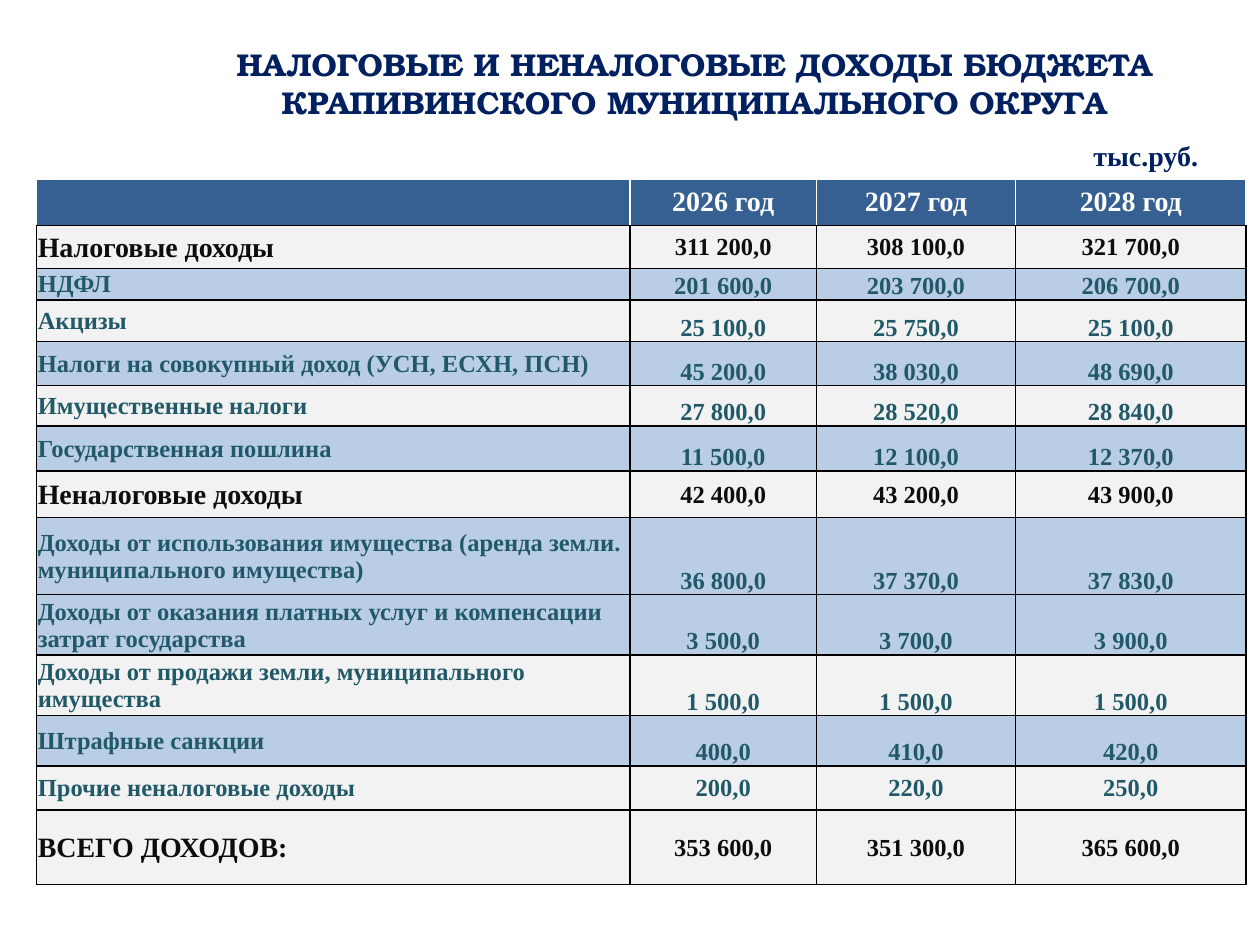
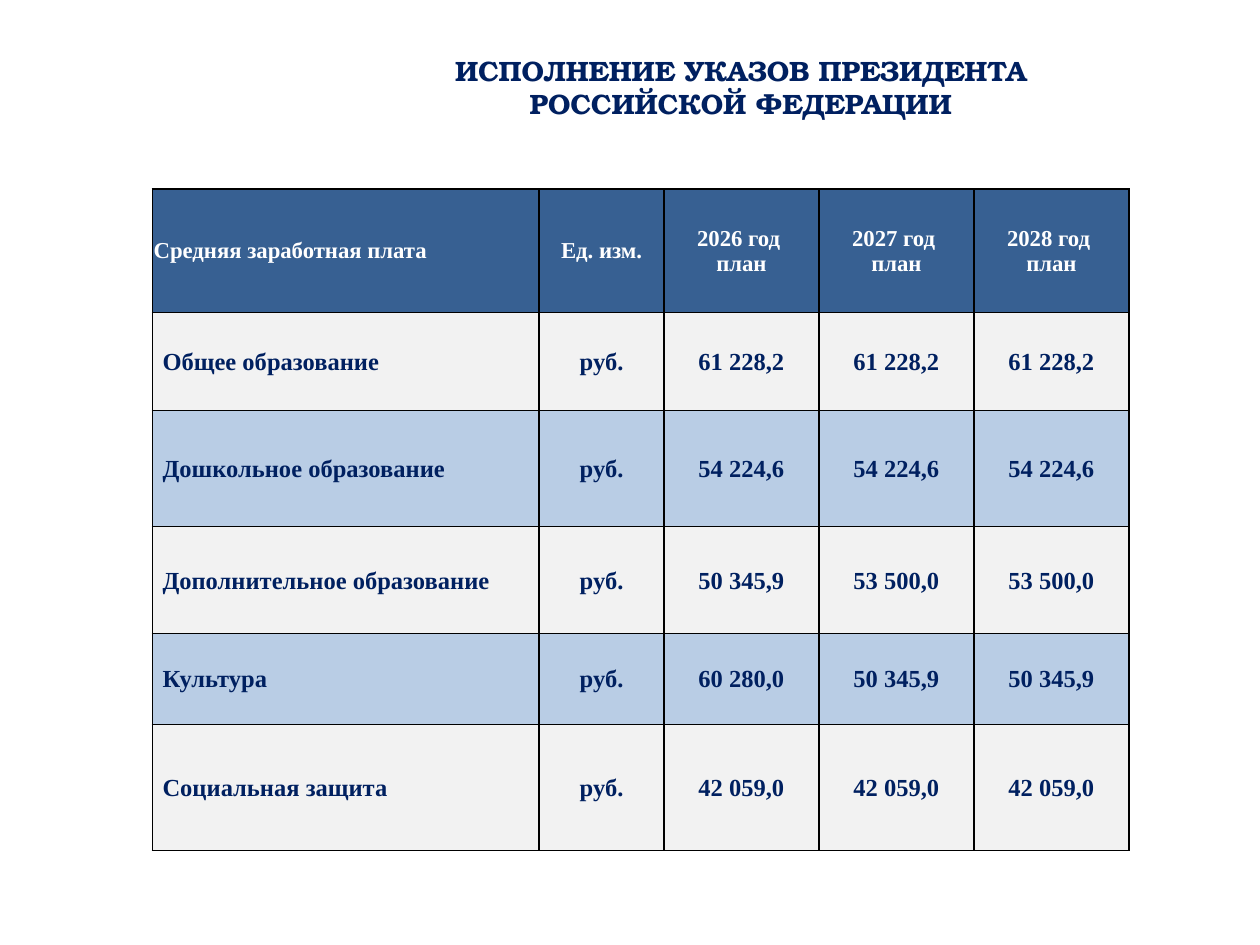
from dataclasses import dataclass, replace
from itertools import product

from pptx import Presentation
from pptx.dml.color import RGBColor
from pptx.enum.shapes import MSO_SHAPE
from pptx.enum.text import MSO_ANCHOR, PP_ALIGN
from pptx.oxml import parse_xml
from pptx.oxml.ns import nsdecls
from pptx.slide import Slide
from pptx.table import _Cell
from pptx.text.text import TextFrame
from pptx.util import Inches, Pt


@dataclass(frozen=True)
class Theme:
    title_font: str = "TeX Gyre Bonum"
    body_font: str = "Times New Roman"
    white: RGBColor = RGBColor(0xFF, 0xFF, 0xFF)
    black: RGBColor = RGBColor(0, 0, 0)
    navy: RGBColor = RGBColor(0x00, 0x20, 0x60)
    header: RGBColor = RGBColor(0x37, 0x60, 0x92)
    light: RGBColor = RGBColor(0xF2, 0xF2, 0xF2)
    tint: RGBColor = RGBColor(0xB9, 0xCD, 0xE5)
    teal: RGBColor = RGBColor(0x21, 0x59, 0x68)
    ink: RGBColor = RGBColor(0x0D, 0x0D, 0x0D)
    large_title: int = 18
    small_title: int = 16
    heading: int = 16
    body: int = 14
    compact: int = 13


THEME = Theme()
TIGHT = (0.01, 0.01, 0.01, 0)
INDENTED = (0.08, 0.01, 0.01, 0)
ROOMY = (0.1, 0.05, 0.1, 0.05)


@dataclass(frozen=True)
class Box:
    left: float
    top: float
    width: float
    height: float

    def lengths(self) -> tuple:
        return tuple(map(Inches, (self.left, self.top, self.width, self.height)))


@dataclass(frozen=True)
class RowStyle:
    fill: RGBColor
    color: RGBColor
    label_size: int = THEME.body
    value_size: int = THEME.body
    value_anchor: MSO_ANCHOR = MSO_ANCHOR.MIDDLE
    label_margins: tuple = TIGHT
    value_margins: tuple = TIGHT
    edge: RGBColor = THEME.black


@dataclass(frozen=True)
class Row:
    height: float
    style: RowStyle
    cells: tuple


INCOME_HEADER = RowStyle(THEME.header, THEME.white, value_size=THEME.heading,
                         value_margins=ROOMY, edge=THEME.white)
INCOME_GROUP = RowStyle(THEME.light, THEME.ink, label_size=THEME.heading)
INCOME_PLAIN = RowStyle(THEME.light, THEME.teal, value_anchor=MSO_ANCHOR.BOTTOM)
INCOME_TINT = replace(INCOME_PLAIN, fill=THEME.tint)
INCOME_OTHER = replace(INCOME_PLAIN, value_anchor=MSO_ANCHOR.MIDDLE)
SALARY_HEADER = RowStyle(THEME.header, THEME.white, THEME.compact, THEME.compact)
SALARY_PLAIN = RowStyle(THEME.light, THEME.navy, label_margins=INDENTED)
SALARY_TINT = replace(SALARY_PLAIN, fill=THEME.tint)

YEARS = ("2026 год", "2027 год", "2028 год")

INCOME_ROWS = (
    Row(0.37, INCOME_HEADER, ("", *YEARS)),
    Row(0.34, INCOME_GROUP, ("Налоговые доходы", "311 200,0", "308 100,0", "321 700,0")),
    Row(0.25, INCOME_TINT, ("НДФЛ", "201 600,0", "203 700,0", "206 700,0")),
    Row(0.33, INCOME_PLAIN, ("Акцизы", "25 100,0", "25 750,0", "25 100,0")),
    Row(0.35, INCOME_TINT, ("Налоги на совокупный доход (УСН, ЕСХН, ПСН)",
                            "45 200,0", "38 030,0", "48 690,0")),
    Row(0.32, INCOME_PLAIN, ("Имущественные налоги", "27 800,0", "28 520,0", "28 840,0")),
    Row(0.36, INCOME_TINT, ("Государственная пошлина", "11 500,0", "12 100,0", "12 370,0")),
    Row(0.37, INCOME_GROUP, ("Неналоговые доходы", "42 400,0", "43 200,0", "43 900,0")),
    Row(0.61, INCOME_TINT, ("Доходы от использования имущества (аренда земли. "
                            "муниципального имущества)",
                            "36 800,0", "37 370,0", "37 830,0")),
    Row(0.48, INCOME_TINT, ("Доходы от оказания платных услуг и компенсации "
                            "затрат государства", "3 500,0", "3 700,0", "3 900,0")),
    Row(0.48, INCOME_PLAIN, ("Доходы от продажи земли, муниципального имущества",
                             "1 500,0", "1 500,0", "1 500,0")),
    Row(0.4, INCOME_TINT, ("Штрафные санкции", "400,0", "410,0", "420,0")),
    Row(0.35, INCOME_OTHER, ("Прочие неналоговые доходы", "200,0", "220,0", "250,0")),
    Row(0.59, INCOME_GROUP, ("ВСЕГО ДОХОДОВ:", "353 600,0", "351 300,0", "365 600,0")),
)

SALARY_ROWS = (
    Row(0.98, SALARY_HEADER, ("Средняя заработная плата", "Ед. изм.",
                              *(f"{year} \nплан" for year in YEARS))),
    Row(0.78, SALARY_PLAIN, ("Общее образование", "руб.",
                             "61 228,2", "61 228,2", "61 228,2")),
    Row(0.92, SALARY_TINT, ("Дошкольное образование", "руб.",
                            "54 224,6", "54 224,6", "54 224,6")),
    Row(0.85, SALARY_PLAIN, ("Дополнительное образование", "руб.",
                             "50 345,9", "53 500,0", "53 500,0")),
    Row(0.72, SALARY_TINT, ("Культура", "руб.", "60 280,0", "50 345,9", "50 345,9")),
    Row(1, SALARY_PLAIN, ("Социальная защита", "руб.",
                          "42 059,0", "42 059,0", "42 059,0")),
)


def write_text(text_frame: TextFrame, text: str, font: str, size: int,
               color: RGBColor, alignment: PP_ALIGN) -> None:
    text_frame.text = text
    text_frame.word_wrap = True
    for paragraph in text_frame.paragraphs:
        paragraph.alignment = alignment
        for run in paragraph.runs:
            run.font.name = font
            run.font.size = Pt(size)
            run.font.bold = True
            run.font.color.rgb = color


def add_title(slide: Slide, box: Box, text: str, size: int, anchor: MSO_ANCHOR) -> None:
    text_frame = slide.shapes.add_textbox(*box.lengths()).text_frame
    write_text(text_frame, text, THEME.title_font, size, THEME.navy, PP_ALIGN.CENTER)
    text_frame.vertical_anchor = anchor


def add_unit_label(slide: Slide, box: Box, text: str) -> None:
    shape = slide.shapes.add_shape(MSO_SHAPE.RECTANGLE, *box.lengths())
    shape.shadow.inherit = False
    shape.fill.solid()
    shape.fill.fore_color.rgb = THEME.white
    shape.line.fill.background()
    write_text(shape.text_frame, text, THEME.body_font, THEME.heading,
               THEME.navy, PP_ALIGN.LEFT)
    shape.text_frame.vertical_anchor = MSO_ANCHOR.MIDDLE


def set_borders(cell: _Cell, edge: RGBColor) -> None:
    properties = cell._tc.get_or_add_tcPr()
    for side in "LRTB":
        color = THEME.black if side == "B" else edge
        properties.append(parse_xml(
            f'<a:ln{side} {nsdecls("a")} w="{Pt(1)}"><a:solidFill>'
            f'<a:srgbClr val="{color}"/></a:solidFill></a:ln{side}>'))


def fill_cell(cell: _Cell, text: str, style: RowStyle, is_label: bool) -> None:
    margins = style.label_margins if is_label else style.value_margins
    (cell.margin_left, cell.margin_top,
     cell.margin_right, cell.margin_bottom) = map(Inches, margins)
    cell.vertical_anchor = MSO_ANCHOR.MIDDLE if is_label else style.value_anchor
    set_borders(cell, style.edge)
    cell.fill.solid()
    cell.fill.fore_color.rgb = style.fill
    write_text(cell.text_frame, text, THEME.body_font,
               style.label_size if is_label else style.value_size, style.color,
               PP_ALIGN.LEFT if is_label else PP_ALIGN.CENTER)


def add_budget_table(slide: Slide, left: float, top: float,
                     widths: tuple, rows: tuple) -> None:
    box = Box(left, top, sum(widths), sum(row.height for row in rows))
    table = slide.shapes.add_table(len(rows), len(widths), *box.lengths()).table
    table.horz_banding = False
    for column, width in zip(table.columns, widths):
        column.width = Inches(width)
    for table_row, row in zip(table.rows, rows):
        table_row.height = Inches(row.height)
    for row_index, column_index in product(range(len(rows)), range(len(widths))):
        row = rows[row_index]
        fill_cell(table.cell(row_index, column_index), row.cells[column_index],
                  row.style, column_index == 0)


def main() -> None:
    presentation = Presentation()
    presentation.slide_width = Inches(10)
    presentation.slide_height = Inches(7.5)
    blank = presentation.slide_layouts[6]

    income_slide = presentation.slides.add_slide(blank)
    add_budget_table(income_slide, 0.29, 1.42, (4.71, 1.48, 1.58, 1.83), INCOME_ROWS)
    add_title(income_slide, Box(1.77, 0, 7.48, 1.01),
              "НАЛОГОВЫЕ И НЕНАЛОГОВЫЕ ДОХОДЫ БЮДЖЕТА КРАПИВИНСКОГО МУНИЦИПАЛЬНОГО ОКРУГА",
              THEME.large_title, MSO_ANCHOR.BOTTOM)
    add_unit_label(income_slide, Box(8.58, 1.06, 1.08, 0.35), "тыс.руб.")

    salary_slide = presentation.slides.add_slide(blank)
    add_title(salary_slide, Box(2.67, 0.23, 6.42, 0.92),
              "ИСПОЛНЕНИЕ УКАЗОВ ПРЕЗИДЕНТА РОССИЙСКОЙ ФЕДЕРАЦИИ",
              THEME.small_title, MSO_ANCHOR.MIDDLE)
    add_budget_table(salary_slide, 1.21, 1.5, (3.07, 0.99, 1.23, 1.23, 1.23), SALARY_ROWS)

    presentation.save("out.pptx")


if __name__ == "__main__":
    main()
